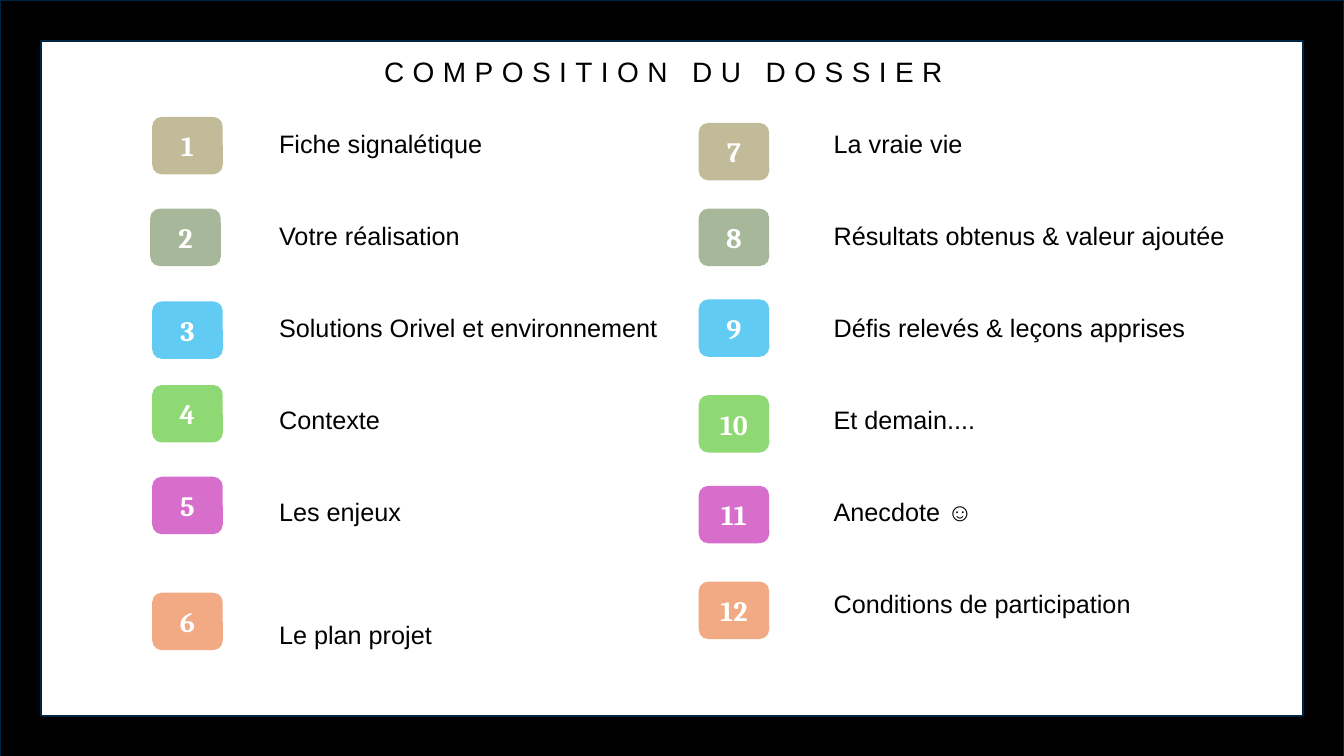
import pptx
import pptx.util
import pptx.dml.color
import pptx.enum.shapes
import pptx.enum.text

Inches = pptx.util.Inches
Pt = pptx.util.Pt
SHAPE = pptx.enum.shapes.MSO_SHAPE
ALIGN = pptx.enum.text.PP_ALIGN
ANCHOR = pptx.enum.text.MSO_ANCHOR
FIT = pptx.enum.text.MSO_AUTO_SIZE

COLORS = {
    "frame": "000000", "edge": "002542", "text": "000000", "number": "FFFFFF",
    "sand": "C1BB99", "sage": "A7B89A", "sky": "61CBF4",
    "green": "8ED973", "orchid": "D86ECC", "peach": "F2AA84",
}
BADGE_FILLS = ["sand", "sage", "sky", "green", "orchid", "peach"]
BADGE_W, BADGE_H = 0.7, 0.57
FORMATS = {
    "title": {"size": Pt(20), "name": "Arial", "bold": False},
    "item": {"size": Pt(18), "name": "Arial", "bold": False},
    "number": {"size": Pt(20), "name": "Cambria", "bold": True},
}
ITEM_GAP = 44.2

LEFT = {
    "first": 1,
    "box": (1.51, 1.22, 5.42, 5.55),
    "label_offset": 1.16,
    "badges": [(0, -0.06), (-0.02, 0.85), (0, 1.77), (0, 2.6), (0, 3.51), (0, 4.66)],
    "labels": ["Fiche signalétique", "Votre réalisation",
               "Solutions Orivel et environnement", "Contexte",
               "Les enjeux", "Le plan projet"],
    "last_gap": 66,
}
RIGHT = {
    "first": 7,
    "box": (6.93, 1.22, 5.71, 4.95),
    "label_offset": 1.24,
    "badges": [(0, 0), (0, 0.85), (0, 1.75), (0, 2.7), (0, 3.6), (0, 4.55)],
    "labels": ["La vraie vie", "Résultats obtenus & valeur ajoutée",
               "Défis relevés & leçons apprises", "Et demain....",
               "Anecdote ☺", "Conditions de participation"],
    "last_gap": ITEM_GAP,
}


def rgb(name):
    return pptx.dml.color.RGBColor.from_string(COLORS[name])


def inches(*lengths):
    return [Inches(n) for n in lengths]


def add_text(p, text, style, color):
    r = p.add_run()
    r.text = text
    for key, value in FORMATS[style].items():
        setattr(r.font, key, value)
    r.font.color.rgb = rgb(color)
    return r


def add_frame(s, x, y, w, h):
    sp = s.shapes.add_shape(SHAPE.FRAME, *inches(x, y, w, h))
    sp.adjustments[0] = 0.054
    sp.shadow.inherit = False
    sp.fill.solid()
    sp.fill.fore_color.rgb = rgb("frame")
    sp.line.color.rgb = rgb("edge")
    sp.line.width = Pt(1.5)


def add_title(s, x, y, w, h):
    sp = s.shapes.title
    sp.left, sp.top, sp.width, sp.height = inches(x, y, w, h)
    tf = sp.text_frame
    tf.word_wrap = True
    tf.auto_size = FIT.NONE
    tf.vertical_anchor = ANCHOR.TOP
    p = tf.paragraphs[0]
    p.alignment = ALIGN.CENTER
    p.line_spacing = 0.9
    r = add_text(p, "COMPOSITION DU DOSSIER ", "title", "text")
    r._r.get_or_add_rPr().set("spc", "600")


def add_badge(s, x, y, number, fill):
    sp = s.shapes.add_shape(SHAPE.ROUNDED_RECTANGLE, *inches(x, y, BADGE_W, BADGE_H))
    sp.shadow.inherit = False
    sp.fill.solid()
    sp.fill.fore_color.rgb = rgb(fill)
    sp.line.fill.background()
    tf = sp.text_frame
    tf.vertical_anchor = ANCHOR.MIDDLE
    p = tf.paragraphs[0]
    p.alignment = ALIGN.CENTER
    add_text(p, str(number), "number", "number")


def add_labels(s, x, y, w, h, labels, last_gap):
    tf = s.shapes.add_textbox(*inches(x, y, w, h)).text_frame
    tf.word_wrap = True
    gaps = [0] + [ITEM_GAP] * (len(labels) - 2) + [last_gap]
    for i, (label, gap) in enumerate(zip(labels, gaps)):
        p = tf.add_paragraph() if i else tf.paragraphs[0]
        p.space_before = Pt(gap)
        add_text(p, label, "item", "text")


def add_column(s, column):
    x, y, w, h = column["box"]
    for i, ((dx, dy), fill) in enumerate(zip(column["badges"], BADGE_FILLS)):
        add_badge(s, x + dx, y + dy, column["first"] + i, fill)
    offset = column["label_offset"]
    add_labels(s, x + offset, y, w - offset, h, column["labels"], column["last_gap"])


def main():
    prs = pptx.Presentation()
    prs.slide_width, prs.slide_height = inches(13.33, 7.5)
    s = prs.slides.add_slide(prs.slide_layouts[5])
    add_frame(s, 0, 0, 13.33, 7.51)
    add_title(s, 1.42, 0.53, 10.48, 0.9)
    for column in (LEFT, RIGHT):
        add_column(s, column)
    prs.save("out.pptx")


if __name__ == "__main__":
    main()
